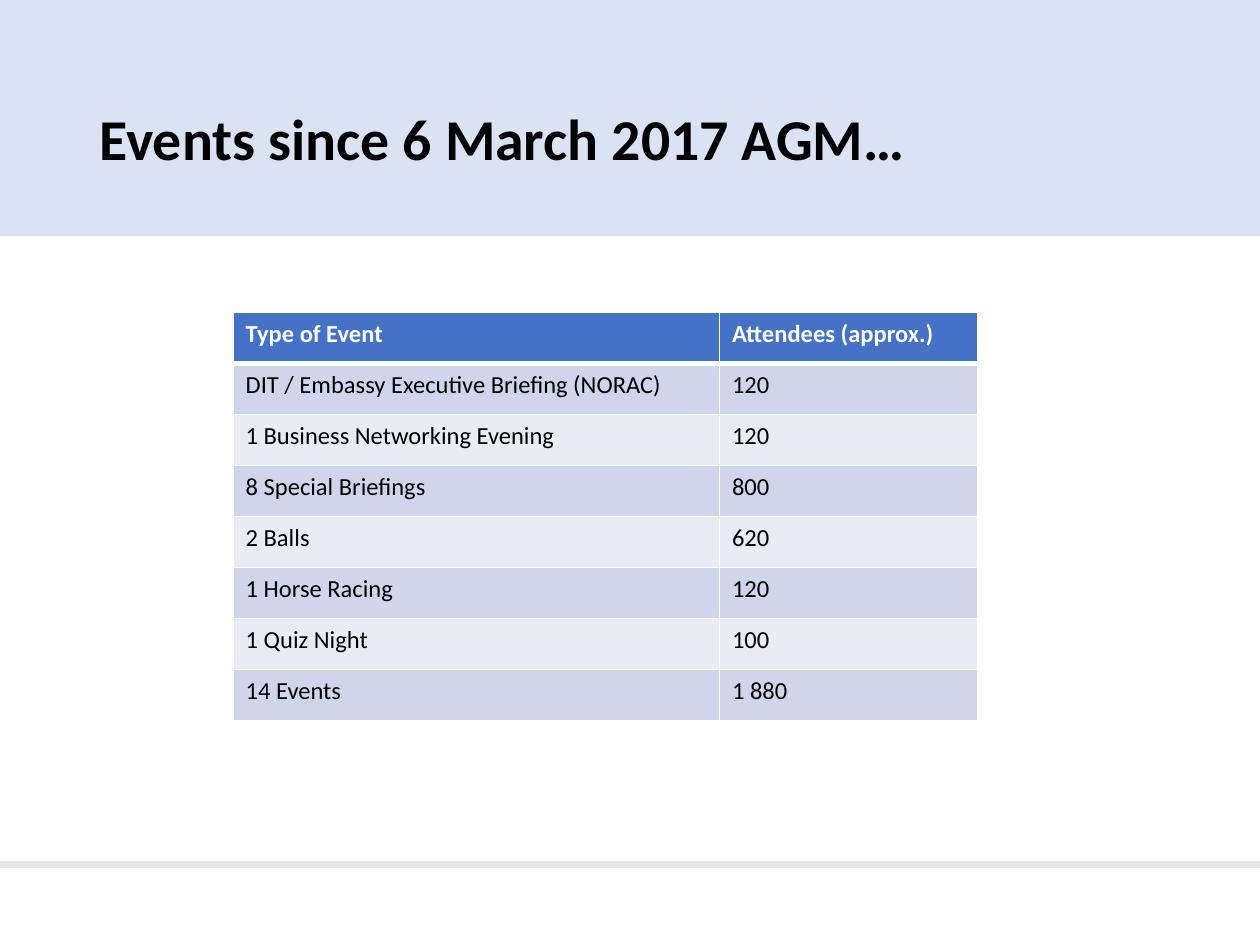
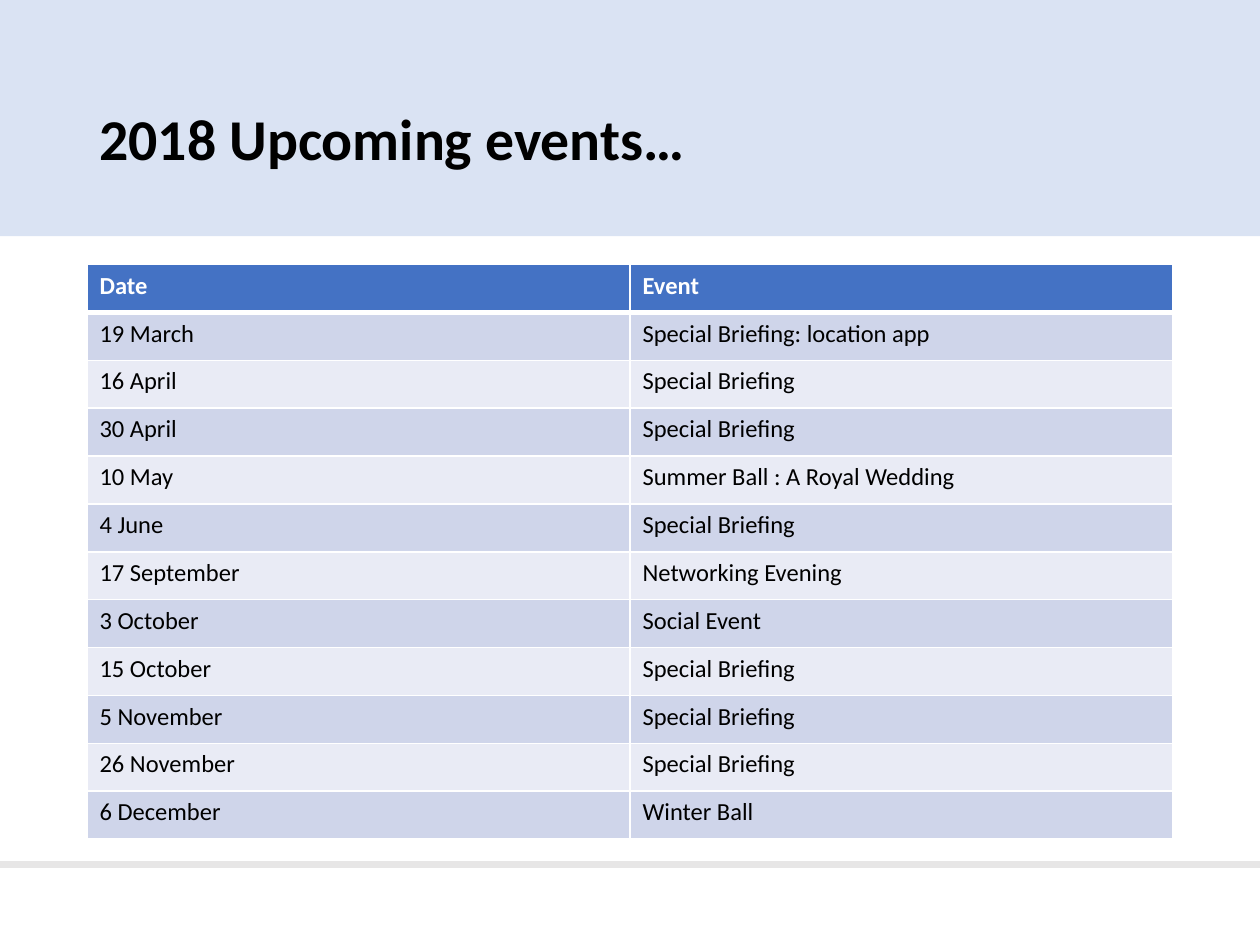
from lxml.etree import SubElement
from pptx import Presentation
from pptx.dml.color import RGBColor
from pptx.enum.shapes import MSO_CONNECTOR as Connector, MSO_SHAPE as Shape
from pptx.enum.text import MSO_ANCHOR as Anchor, MSO_AUTO_SIZE as AutoSize, PP_ALIGN as Align
from pptx.oxml.ns import qn
from pptx.util import Inches, Pt

# Content: table place is left, top, height; columns are widths
SLIDES = [
    {
        "title": "Events since 6 March 2017 AGM…",
        "place": (1.85, 2.48, 3.24),
        "columns": (3.86, 2.05),
        "rows": [
            ("Type of Event", "Attendees (approx.)"),
            ("DIT / Embassy Executive Briefing (NORAC)", "120"),
            ("1 Business Networking Evening", "120"),
            ("8 Special Briefings", "800"),
            ("2 Balls", "620"),
            ("1 Horse Racing", "120"),
            ("1 Quiz Night", "100"),
            ("14 Events", "1 880"),
        ],
    },
    {
        "title": "2018 Upcoming events…",
        "place": (0.69, 2.1, 4.56),
        "columns": (4.31, 4.31),
        "rows": [
            ("Date", "Event"),
            ("19 March", "Special Briefing: location app"),
            ("16 April", "Special Briefing"),
            ("30 April", "Special Briefing"),
            ("10 May", "Summer Ball : A Royal Wedding"),
            ("4 June", "Special Briefing"),
            ("17 September", "Networking Evening"),
            ("3 October", "Social Event"),
            ("15 October", "Special Briefing"),
            ("5 November", "Special Briefing"),
            ("26 November", "Special Briefing"),
            ("6 December", "Winter Ball"),
        ],
    },
]

# Shared look
COLORS = {
    "band": "DAE3F3", "rule": "E7E6E6", "header": "4472C4",
    "odd": "CFD5EA", "even": "E9EBF5", "text": "000000", "white": "FFFFFF",
}
FONT = "Calibri"
WIDTH, HEIGHT = 10, 7.5
BAND_HEIGHT = HEIGHT / 4
RULE_TOP = 6.86
TITLE_BOX = (0.69, 0.4, 8.62, 1.45)


def color(name):
    return RGBColor.from_string(COLORS[name])


def style_font(font, size, color_name, bold):
    font.name, font.size, font.bold = FONT, Pt(size), bold
    font.color.rgb = color(color_name)


def add_backdrop(page, layout):
    """Draw the band and the footer rule, then hand them to the layout."""
    band = page.shapes.add_shape(Shape.RECTANGLE, 0, 0, Inches(WIDTH), Inches(BAND_HEIGHT))
    band.shadow.inherit = False
    band.fill.solid()
    band.fill.fore_color.rgb = color("band")
    band.line.fill.background()

    rule = page.shapes.add_connector(
        Connector.STRAIGHT, 0, Inches(RULE_TOP), Inches(WIDTH), Inches(RULE_TOP))
    rule.line.color.rgb = color("rule")
    rule.line.width = Pt(4.25)
    SubElement(rule.element.spPr, qn("a:effectLst"))

    for part in (band, rule):
        layout.shapes.element.insert(2, part.element)


def set_title(page, text):
    title = page.shapes.title
    title.left, title.top, title.width, title.height = map(Inches, TITLE_BOX)
    frame = title.text_frame
    frame.text = text
    frame.auto_size = AutoSize.NONE
    frame.vertical_anchor = Anchor.MIDDLE
    para = frame.paragraphs[0]
    para.alignment = Align.LEFT
    para.line_spacing = 0.9
    style_font(para.runs[0].font, 33, "text", True)


def set_borders(cell, row):
    """White borders, with a thick one between the header and the body."""
    widths = {"lnL": 1, "lnR": 1, "lnT": 3 if row == 1 else 1, "lnB": 3 if row == 0 else 1}
    properties = cell._tc.get_or_add_tcPr()
    for index, (side, width) in enumerate(widths.items()):
        line = properties.makeelement(qn(f"a:{side}"), {"w": str(Pt(width))})
        fill = SubElement(line, qn("a:solidFill"))
        SubElement(fill, qn("a:srgbClr"), val=COLORS["white"])
        properties.insert(index, line)


def add_table(page, place, columns, rows):
    left, top, height = map(Inches, place)
    table = page.shapes.add_table(
        len(rows), len(columns), left, top, Inches(sum(columns)), height).table
    for column, width in zip(table.columns, columns):
        column.width = Inches(width)
    for r, texts in enumerate(rows):
        fill_name = "header" if r == 0 else "odd" if r % 2 else "even"
        for c, text in enumerate(texts):
            cell = table.cell(r, c)
            cell.text_frame.text = text
            style_font(cell.text_frame.paragraphs[0].runs[0].font, 14,
                       "text" if r else "white", r == 0)
            cell.fill.solid()
            cell.fill.fore_color.rgb = color(fill_name)
            set_borders(cell, r)


def main():
    deck = Presentation()
    deck.slide_width, deck.slide_height = Inches(WIDTH), Inches(HEIGHT)
    layout = deck.slide_layouts[5]
    for number, content in enumerate(SLIDES):
        page = deck.slides.add_slide(layout)
        if number == 0:
            add_backdrop(page, layout)
        set_title(page, content["title"])
        add_table(page, content["place"], content["columns"], content["rows"])
    deck.save("out.pptx")


if __name__ == "__main__":
    main()
